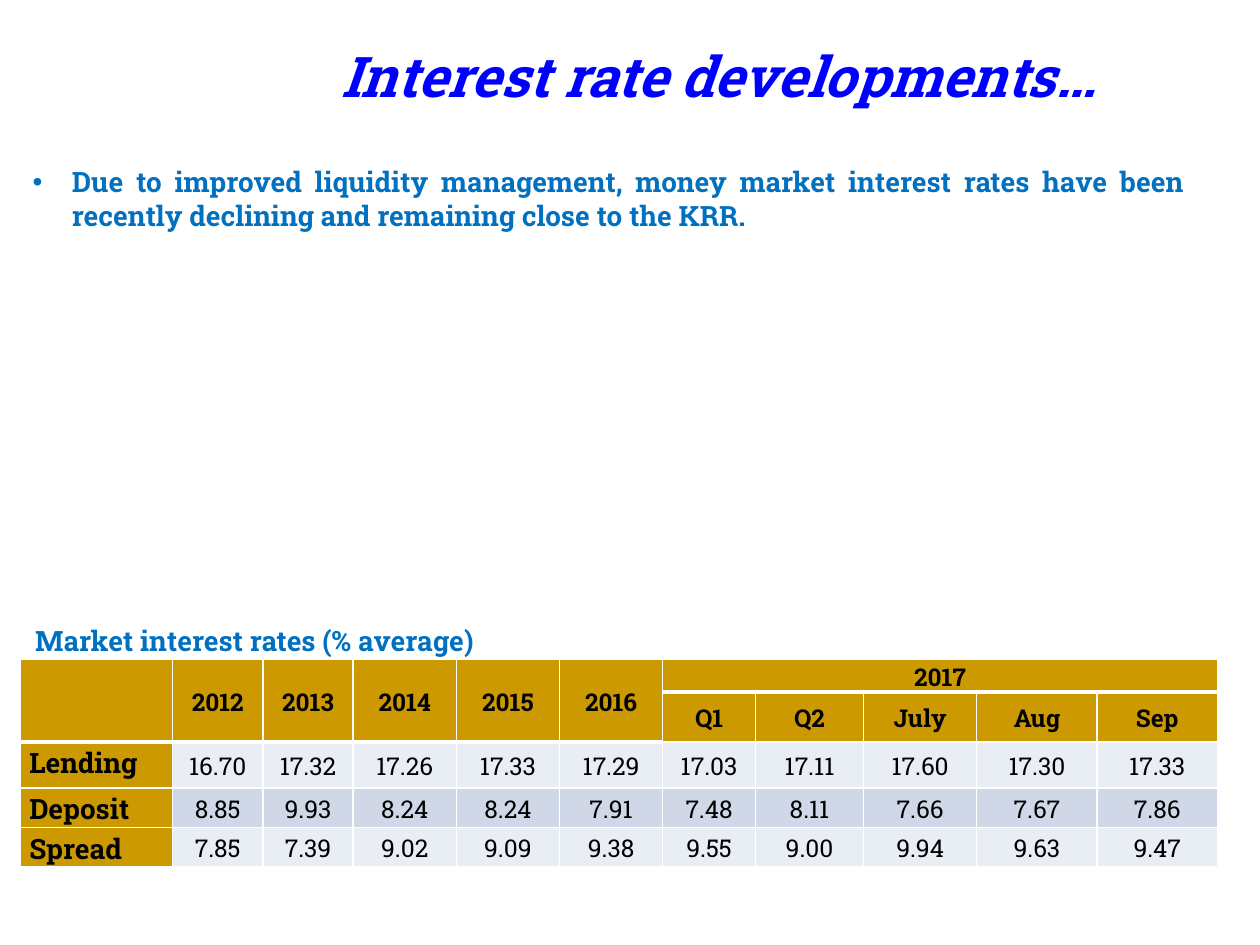
from lxml import etree
from pptx import Presentation, util as u
from pptx.dml.color import RGBColor
from pptx.enum import text as t
from pptx.oxml import ns

GOLD = RGBColor(0xCC, 0x99, 0x00)
BLUE = RGBColor(0x00, 0x00, 0xFF)
SKY = RGBColor(0x00, 0x70, 0xC0)
BLACK = RGBColor(0, 0, 0)
PALE = RGBColor(0xE9, 0xED, 0xF4)
BAND = RGBColor(0xD0, 0xD8, 0xE8)
FONT = "Roboto Slab"
CENTER, JUSTIFY = t.PP_ALIGN.CENTER, t.PP_ALIGN.JUSTIFY
TOP, MIDDLE = t.MSO_ANCHOR.TOP, t.MSO_ANCHOR.MIDDLE

YEARS = ["2012", "2013", "2014", "2015", "2016"]
PERIODS = ["Q1", "Q2", "July", "Aug", "Sep"]
RATES = {
    "Lending": "16.70 17.32 17.26 17.33 17.29 17.03 17.11 17.60 17.30 17.33",
    "Deposit": "8.85 9.93 8.24 8.24 7.91 7.48 8.11 7.66 7.67 7.86",
    "Spread": "7.85 7.39 9.02 9.09 9.38 9.55 9.00 9.94 9.63 9.47",
}
COLUMN_WIDTHS = [3.07, 1.82, 1.82, 2.08, 2.08, 2.08, 1.87, 2.18, 2.28, 2.43, 2.42]
ROW_HEIGHTS = [0.67, 1.01, 0.93, 0.79, 0.79]


def apply(target, values):
    for name, value in values.items():
        setattr(target, name, value)


def write(paragraph, wording, size, color, align=None, **style):
    paragraph.alignment = align
    run = paragraph.add_run()
    run.text = wording
    apply(run.font, {"name": FONT, "size": u.Pt(size), **style})
    run.font.color.rgb = color


def add_text(slide, box, anchor=TOP):
    """Add a wrapping text box and return its first paragraph."""
    frame = slide.shapes.add_textbox(*map(u.Cm, box)).text_frame
    apply(frame, {"word_wrap": True, "vertical_anchor": anchor})
    return frame.paragraphs[0]


def add_title(slide, box):
    write(add_text(slide, box, MIDDLE), "Interest rate developments…",
          32, BLUE, CENTER, bold=True, italic=True)


def add_message(slide, box):
    message = add_text(slide, box)
    properties = message._p.get_or_add_pPr()
    indent = u.Cm(0.79)
    properties.set("marL", str(indent))
    properties.set("indent", str(-indent))
    etree.SubElement(properties, ns.qn("a:buFont")).set("typeface", "Arial")
    etree.SubElement(properties, ns.qn("a:buChar")).set("char", "•")
    write(message, "Due to improved liquidity management, money market interest "
          "rates have been recently declining and remaining close to the KRR.",
          16, SKY, JUSTIFY, bold=True)


def add_borders(cell, bottom):
    """Draw white lines round a cell; only the bottom width varies."""
    properties = cell._tc.get_or_add_tcPr()
    widths = {"lnL": 1, "lnR": 1, "lnT": 1, "lnB": bottom}
    for place, (side, width) in enumerate(widths.items()):
        line = etree.Element(ns.qn(f"a:{side}"), w=str(u.Pt(width)))
        fill = etree.SubElement(line, ns.qn("a:solidFill"))
        etree.SubElement(fill, ns.qn("a:srgbClr")).set("val", "FFFFFF")
        properties.insert(place, line)


def fill_cell(cell, wording, color, size=14, align=CENTER, anchor=MIDDLE,
              bold=False):
    apply(cell, {"margin_left": u.Cm(0.18), "margin_right": u.Cm(0.18),
                 "margin_top": 0, "margin_bottom": 0, "vertical_anchor": anchor})
    cell.fill.solid()
    cell.fill.fore_color.rgb = color
    paragraph = cell.text_frame.paragraphs[0]
    paragraph.line_spacing = 1.07
    if wording:
        write(paragraph, wording, size, BLACK, align, bold=bold)
    else:
        etree.SubElement(paragraph._p, ns.qn("a:endParaRPr")).set("sz", "1200")


def add_rates(slide, box):
    left, top, width, height = box

    # Caption above the table
    caption = add_text(slide, (left + 0.05, top - 0.84, 12.52, 0.94))
    write(caption, "Market interest rates (% average)", 16, SKY, bold=True)

    table = slide.shapes.add_table(
        len(ROW_HEIGHTS), len(COLUMN_WIDTHS), *map(u.Cm, box)).table
    apply(table, {"first_row": False, "horz_banding": False})
    for column, column_width in zip(table.columns, COLUMN_WIDTHS):
        column.width = u.Cm(column_width)
    for row, row_height in zip(table.rows, ROW_HEIGHTS):
        row.height = u.Cm(row_height)

    # Two header rows: years span both, 2017 spans its periods
    headers = [["", *YEARS, "2017", *[""] * 4], [""] * 6 + PERIODS]
    for r, labels in enumerate(headers):
        for c, label in enumerate(labels):
            fill_cell(table.cell(r, c), label, GOLD, bold=True,
                      anchor=TOP if label == "2017" else MIDDLE)
            add_borders(table.cell(r, c), 3 if r == 0 or c < 6 else 1)
    for c in range(6):
        table.cell(0, c).merge(table.cell(1, c))
    table.cell(0, 6).merge(table.cell(0, 10))

    # Rate rows with alternating shades
    for r, (rate, values) in enumerate(RATES.items(), start=2):
        fill_cell(table.cell(r, 0), rate, GOLD, 16, JUSTIFY, TOP, True)
        for c, value in enumerate(values.split(), start=1):
            fill_cell(table.cell(r, c), value, BAND if r % 2 else PALE)
        for c in range(len(COLUMN_WIDTHS)):
            add_borders(table.cell(r, c), 1)


def main():
    deck = Presentation()
    apply(deck, {"slide_width": u.Cm(25.4), "slide_height": u.Cm(19.05)})
    slide = deck.slides.add_slide(deck.slide_layouts[6])
    add_rates(slide, (0.41, 13.28, 24.13, 4.19))
    add_message(slide, (0.41, 3.2, 23.72, 1.63))
    add_title(slide, (4.01, 0.46, 20.96, 2.11))
    deck.save("out.pptx")


if __name__ == "__main__":
    main()
